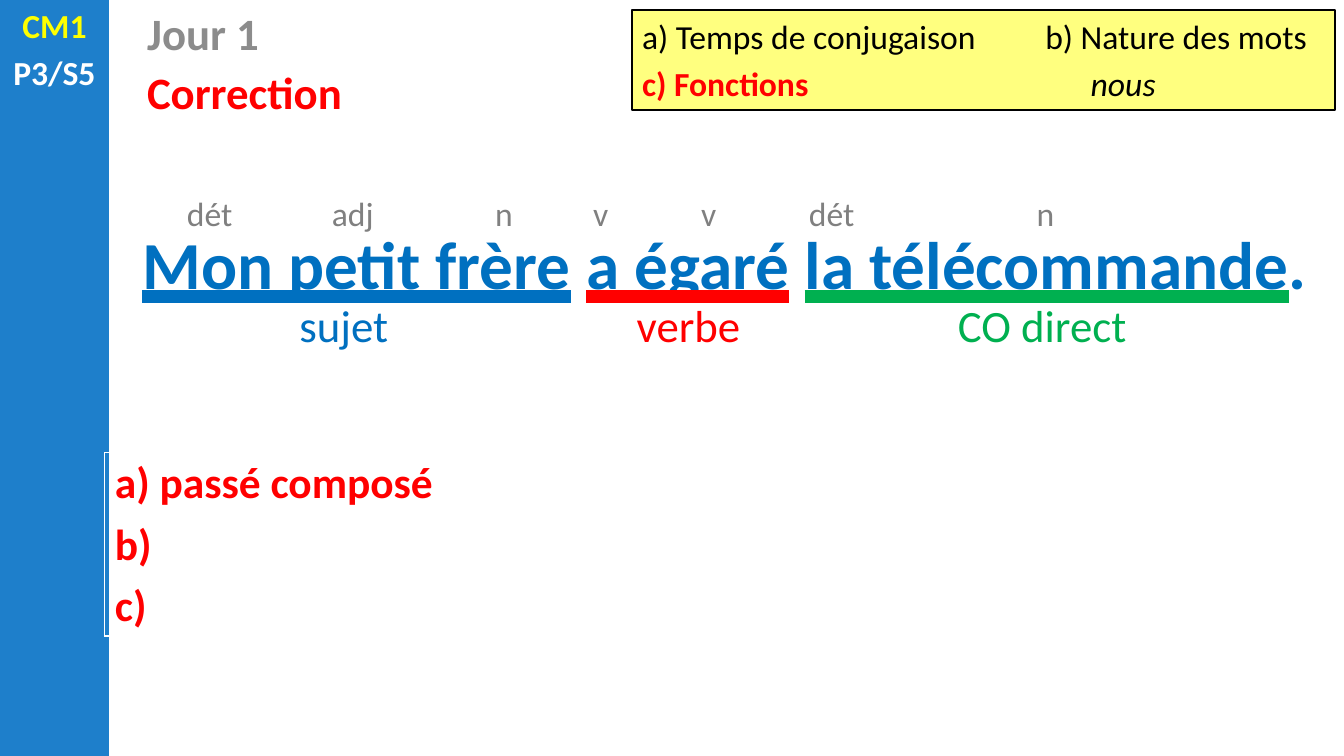
from lxml import etree
from pptx import Presentation
from pptx import util as u
from pptx.dml.color import RGBColor
from pptx.enum import shapes, text
from pptx.oxml.ns import qn

WIDTH, HEIGHT = u.Inches(13.33), u.Inches(7.5)
FONT = "Calibri"
COLORS = {
    "sidebar": "1E7FCB", "yellow": "FFFF00", "white": "FFFFFF", "black": "000000",
    "day": "8C8C8C", "nature": "808080", "blue": "0070C0", "red": "FF0000", "green": "00B050",
}
NATURES = [("dét", 15.6), ("adj", 26.25), ("n", 37.5), ("v", 44.7),
           ("v", 52.73), ("dét", 61.88), ("n", 77.78)]
FUNCTIONS = [("sujet", 25.58, 9.3, "blue"), ("verbe", 51.23, 9.3, "red"),
             ("CO direct", 77.55, 17.1, "green")]


def area(left, top, width, height):
    return (round(WIDTH * left / 100), round(HEIGHT * top / 100),
            round(WIDTH * width / 100), round(HEIGHT * height / 100))


def color(name):
    return RGBColor.from_string(COLORS[name])


def add_span(para, words, size=24, ink="black", bold=False, italic=False, underline=None):
    span = para.add_run()
    span.text = words
    font = span.font
    font.name, font.size, font.bold, font.italic = FONT, u.Pt(size), bold, italic
    font.color.rgb = color(ink)
    if underline:
        font.underline = text.MSO_UNDERLINE.HEAVY_LINE
        line_fill = etree.Element(qn("a:uFill"))
        solid = etree.SubElement(line_fill, qn("a:solidFill"))
        etree.SubElement(solid, qn("a:srgbClr")).set("val", COLORS[underline])
        font._element.find(qn("a:latin")).addprevious(line_fill)


def write(frame, lines, align=text.PP_ALIGN.LEFT, before=0, after=0):
    frame.word_wrap = True
    for index, spans in enumerate(lines):
        para = frame.add_paragraph() if index else frame.paragraphs[0]
        para.alignment = align
        para.space_before = u.Pt(before if index else 0)
        para.space_after = u.Pt(after)
        for words, style in spans:
            add_span(para, words, **style)


def add_label(page, place, lines, **layout):
    box = page.shapes.add_textbox(*area(*place))
    write(box.text_frame, lines, **layout)


def add_centred(page, middle, top, width, height, words, **style):
    add_label(page, (middle - width / 2, top, width, height), [[(words, style)]],
              align=text.PP_ALIGN.CENTER)


def add_panel(page, place, fill):
    panel = page.shapes.add_shape(shapes.MSO_SHAPE.RECTANGLE, *area(*place))
    panel.shadow.inherit = False
    panel.fill.solid()
    panel.fill.fore_color.rgb = color(fill)
    panel.line.fill.background()
    return panel


def add_tab(para, position):
    tabs = etree.SubElement(para._p.get_or_add_pPr(), qn("a:tabLst"))
    etree.SubElement(tabs, qn("a:tab"), pos=str(u.Inches(position)), algn="l")


def add_instructions(page):
    panel = add_panel(page, (47.03, 1.33, 52.28, 13.2), "yellow")
    fill_color = panel._element.spPr.find(qn("a:solidFill"))[0]
    etree.SubElement(fill_color, qn("a:alpha")).set("val", "50000")
    panel.line.color.rgb = color("black")
    panel.line.width = u.Pt(1.5)
    write(panel.text_frame, [
        [("a) Temps de conjugaison\tb) Nature des mots", {})],
        [("c) Fonctions\t", {"ink": "red", "bold": True}), ("nous", {"italic": True})],
    ], before=4.8)
    for para, position in zip(panel.text_frame.paragraphs, (4, 4.45)):
        add_tab(para, position)


def add_title(page):
    title = page.shapes.title
    title.left, title.top, title.width, title.height = area(10.2, 0, 59.3, 8.53)
    write(title.text_frame, [[("Jour 1", {"size": 32, "ink": "day", "bold": True})]])


def add_sentence(page):
    style = {"size": 48, "ink": "blue", "bold": True}
    add_label(page, (7.8, 28.8, 92.2, 12.13), [[
        ("Mon petit frère", {**style, "underline": "blue"}), (" ", style),
        ("a égaré", {**style, "underline": "red"}), (" ", style),
        ("la télécommande", {**style, "underline": "green"}), (".", style),
    ]], align=text.PP_ALIGN.CENTER)


def add_answers(page):
    table = page.shapes.add_table(1, 1, *area(7.8, 59.87, 92.2, 24.27)).table
    table.first_row = table.horz_banding = False
    cell = table.cell(0, 0)
    cell.fill.background()
    style = {"size": 31, "ink": "red", "bold": True}
    write(cell.text_frame, [[(words, style)] for words in ("a) passé composé", "b)", "c)")],
          after=6)


def main():
    deck = Presentation()
    deck.slide_width, deck.slide_height = WIDTH, HEIGHT
    page = deck.slides.add_slide(deck.slide_layouts[5])
    add_panel(page, (0, 0, 8.1, 100), "sidebar")
    add_label(page, (0, 0, 8.1, 13.2), [
        [("CM1", {"ink": "yellow", "bold": True})],
        [("P3/S5", {"ink": "white", "bold": True})],
    ], align=text.PP_ALIGN.CENTER, before=4.8)
    add_title(page)
    add_label(page, (10.2, 7.87, 36.2, 8.53),
              [[("Correction", {"size": 32, "ink": "red", "bold": True})]])
    add_instructions(page)
    add_sentence(page)
    for words, middle in NATURES:
        add_centred(page, middle, 24.8, 6.75, 6.67, words, ink="nature")
    for words, middle, width, ink in FUNCTIONS:
        add_centred(page, middle, 38.67, width, 8.53, words, size=32, ink=ink)
    add_answers(page)
    deck.save("out.pptx")


if __name__ == "__main__":
    main()
